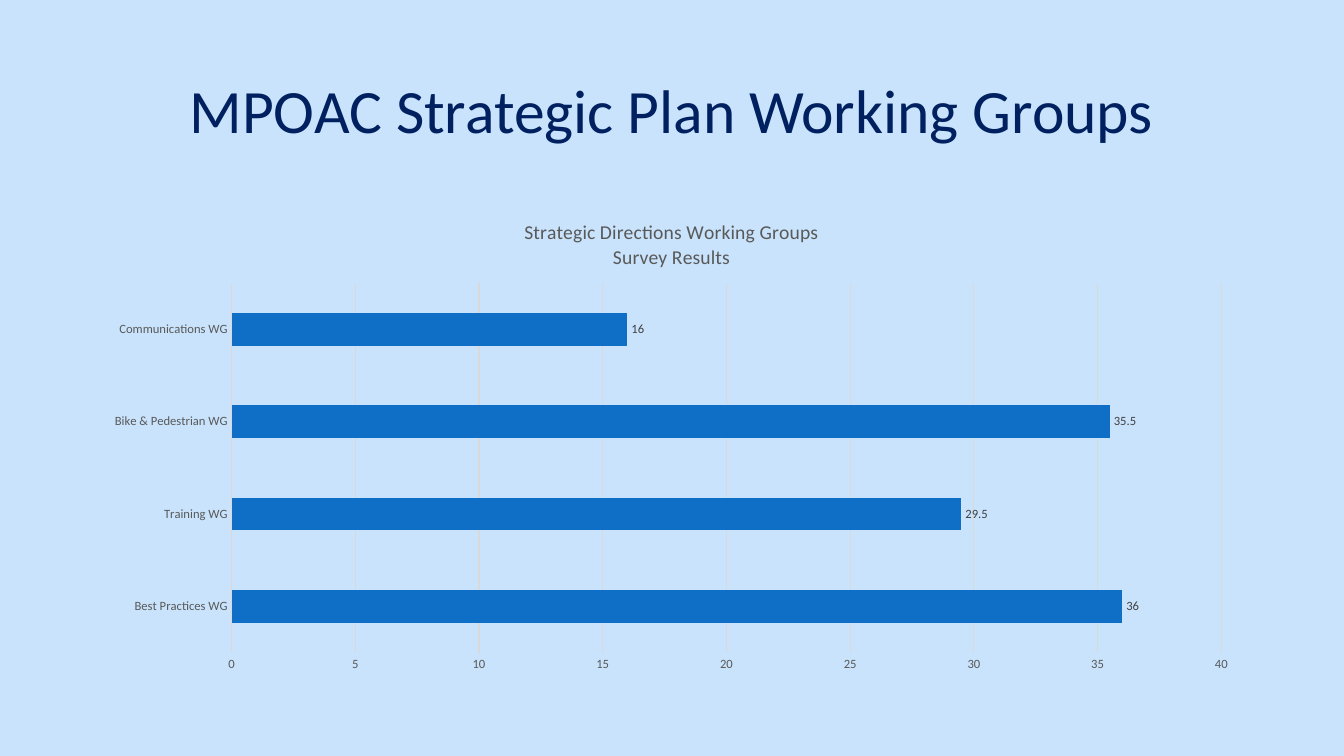
from lxml import etree
from pptx import Presentation
from pptx.chart.data import CategoryChartData
from pptx.dml.color import RGBColor
from pptx.enum.chart import XL_CHART_TYPE as ChartType
from pptx.enum.chart import XL_LABEL_POSITION as LabelPosition
from pptx.enum.chart import XL_TICK_MARK as TickMark
from pptx.enum.text import MSO_ANCHOR as Anchor
from pptx.enum.text import PP_ALIGN as Align
from pptx.oxml.ns import qn
from pptx.util import Cm, Pt

FONT = "Calibri"
SKY = RGBColor(0xC8, 0xE3, 0xFB)
NAVY = RGBColor(0x00, 0x20, 0x60)
BLUE = RGBColor(0x0F, 0x6F, 0xC6)
BLACK = RGBColor(0x00, 0x00, 0x00)
DARK_GREY = RGBColor(0x40, 0x40, 0x40)
GREY = RGBColor(0x59, 0x59, 0x59)
LIGHT_GREY = RGBColor(0xD9, 0xD9, 0xD9)

LEFT, WIDTH = Cm(2.33), Cm(29.21)
VOTES = {
    "Best Practices WG": 36,
    "Training WG": 29.5,
    "Bike & Pedestrian WG": 35.5,
    "Communications WG": 16,
}


def set_font(font, size, color):
    """Apply the slide's typeface with a size and colour."""
    font.name = FONT
    font.size = Pt(size)
    font.bold = False
    font.color.rgb = color


def set_line(line, color):
    """Draw a thin solid line."""
    line.color.rgb = color
    line.width = Pt(0.75)


def set_layout(parent, index, **settings):
    """Place a chart part by fractions of the chart area."""
    for previous in parent.findall(qn("c:layout")):
        parent.remove(previous)
    layout = etree.Element(qn("c:layout"))
    manual = etree.SubElement(layout, qn("c:manualLayout"))
    for tag, value in settings.items():
        etree.SubElement(manual, qn(f"c:{tag}")).set("val", str(value))
    parent.insert(index, layout)


def add_heading(slide, text):
    """Fill and format the title placeholder."""
    heading = slide.shapes.title
    heading.left, heading.top = LEFT, Cm(1.01)
    heading.width, heading.height = WIDTH, Cm(3.68)
    frame = heading.text_frame
    frame.text = text
    frame.word_wrap = True
    frame.vertical_anchor = Anchor.MIDDLE
    paragraph = frame.paragraphs[0]
    paragraph.alignment = Align.CENTER
    paragraph.line_spacing = 0.9
    set_font(paragraph.font, 44, NAVY)


def format_chart_title(chart, text):
    """Write the chart title and put it above the bars."""
    chart.has_title = True
    title = chart.chart_title
    title.include_in_layout = False
    title.text_frame.text = text
    for paragraph in title.text_frame.paragraphs:
        set_font(paragraph.font, 14, GREY)
    set_layout(title.element, 1, xMode="edge", yMode="edge", x=0.37, y=0.03)


def format_axes(chart):
    """Style the group names, the scale and its gridlines."""
    groups, scale = chart.category_axis, chart.value_axis
    for axis in (groups, scale):
        axis.major_tick_mark = axis.minor_tick_mark = TickMark.NONE
        set_font(axis.tick_labels.font, 9, GREY)
    set_line(groups.format.line, LIGHT_GREY)
    scale.format.line.fill.background()
    scale.minimum_scale, scale.maximum_scale = 0, 40
    scale.major_unit = 5
    scale.has_major_gridlines = True
    set_line(scale.major_gridlines.format.line, LIGHT_GREY)


def format_bars(plot):
    """Style the bars and their value labels."""
    plot.gap_width = 182
    plot.vary_by_categories = False
    bars = plot.series[0]
    bars.format.fill.solid()
    bars.format.fill.fore_color.rgb = BLUE
    labels = bars.data_labels
    labels.show_value = True
    labels.position = LabelPosition.OUTSIDE_END
    set_font(labels.font, 9, DARK_GREY)


def add_survey_chart(slide, votes):
    """Add the bar chart of survey results."""
    survey = CategoryChartData()
    survey.categories = list(votes)
    survey.add_series("Series 1", list(votes.values()))
    chart = slide.shapes.add_chart(
        ChartType.BAR_CLUSTERED, LEFT, Cm(5.08), WIDTH, Cm(12.09), survey
    ).chart
    chart.has_legend = False
    set_font(chart.font, 10, BLACK)
    format_chart_title(chart, "Strategic Directions Working Groups\nSurvey Results")
    format_axes(chart)
    format_bars(chart.plots[0])
    plot_area = chart.element.find(f".//{qn('c:plotArea')}")
    set_layout(plot_area, 0, layoutTarget="inner", xMode="edge", yMode="edge",
               x=0.12, y=0.17, w=0.854, h=0.77)


def main():
    """Build the working groups slide."""
    deck = Presentation()
    deck.slide_width, deck.slide_height = Cm(33.87), Cm(19.05)
    slide = deck.slides.add_slide(deck.slide_layouts[5])
    slide.background.fill.solid()
    slide.background.fill.fore_color.rgb = SKY
    add_heading(slide, "MPOAC Strategic Plan Working Groups")
    add_survey_chart(slide, VOTES)
    deck.save("out.pptx")


if __name__ == "__main__":
    main()
